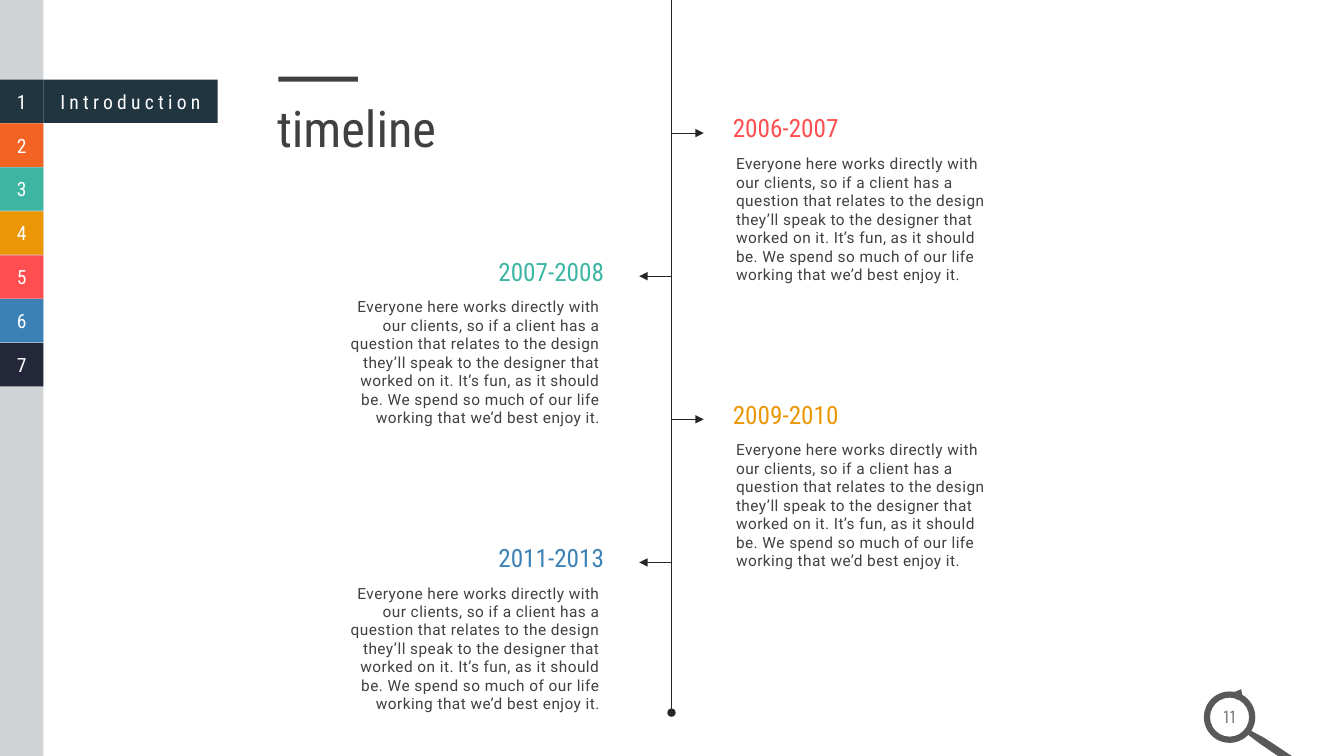
from lxml import etree
from pptx import Presentation
from pptx.dml.color import RGBColor
from pptx.enum.shapes import MSO_CONNECTOR, MSO_SHAPE
from pptx.enum.text import MSO_ANCHOR, PP_ALIGN
from pptx.oxml.ns import qn
from pptx.util import Inches, Pt

RECT, DONUT, ARROW = MSO_SHAPE.RECTANGLE, MSO_SHAPE.DONUT, MSO_SHAPE.RIGHT_ARROW
STRAIGHT = MSO_CONNECTOR.STRAIGHT
LEFT, CENTER, RIGHT = PP_ALIGN.LEFT, PP_ALIGN.CENTER, PP_ALIGN.RIGHT
MIDDLE = MSO_ANCHOR.MIDDLE

WHITE = RGBColor(0xFF, 0xFF, 0xFF)
SIDEBAR = RGBColor(0x1A, 0x2A, 0x33)
NAVY = RGBColor(0x21, 0x35, 0x40)
ORANGE = RGBColor(0xF3, 0x63, 0x24)
TEAL = RGBColor(0x3C, 0xB5, 0xA2)
AMBER = RGBColor(0xEB, 0x96, 0x05)
CORAL = RGBColor(0xFE, 0x4E, 0x50)
BLUE = RGBColor(0x3C, 0x81, 0xB5)
INK = RGBColor(0x24, 0x27, 0x3A)
TEXT = RGBColor(0x40, 0x40, 0x40)
LINE = RGBColor(0x26, 0x26, 0x26)
LENS = RGBColor(0x59, 0x59, 0x59)
PAGE = RGBColor(0x80, 0x80, 0x80)

CONDENSED, BODY, NUMBER = "Roboto Condensed", "Roboto", "Karla"
TAB_TOP, TAB_SIZE, TAB_PITCH = 0.79, 0.43, 3.05 / 7
TAB_COLORS = [NAVY, ORANGE, TEAL, AMBER, CORAL, BLUE, INK]
AXIS_X, EVENT_TOP, EVENT_PITCH = 6.66, 1.07, 1.42
EVENTS = [("2006-2007", CORAL), ("2007-2008", TEAL),
          ("2009-2010", AMBER), ("2011-2013", BLUE)]
STORY = ("Everyone here works directly with our clients, so if a client has a "
         "question that relates to the design they’ll speak to the designer "
         "that worked on it. It’s fun, as it should be. We spend so much of "
         "our life working that we’d best enjoy it.")
HANDLE = [(12.41, 7.25), (12.54, 7.32), (12.92, 7.57), (12.92, 7.62),
          (12.88, 7.64), (12.5, 7.38), (12.38, 7.29)]


def paint(s, color):
    s.shadow.inherit = False
    s.fill.solid()
    s.fill.fore_color.rgb = color
    s.line.fill.background()


def add_block(slide, kind, x, y, w, h, color):
    s = slide.shapes.add_shape(kind, Inches(x), Inches(y), Inches(w), Inches(h))
    paint(s, color)
    return s


def write(tf, text, size, font, color, align=LEFT, spacing=0):
    """Fill a text frame with one paragraph; spacing is in points."""
    tf.word_wrap = True
    tf.text = text
    p = tf.paragraphs[0]
    p.alignment = align
    r = p.runs[0]
    r.font.size = Pt(size)
    r.font.name = font
    r.font.color.rgb = color
    if spacing:
        r.font._element.set("spc", str(round(spacing * 100)))


def add_text(slide, x, y, w, h, *style, **options):
    s = slide.shapes.add_textbox(Inches(x), Inches(y), Inches(w), Inches(h))
    write(s.text_frame, *style, **options)
    return s.text_frame


def add_line(slide, x1, y1, x2, y2, end):
    """Draw a thin line whose second point carries the given arrowhead."""
    c = slide.shapes.add_connector(STRAIGHT, Inches(x1), Inches(y1),
                                   Inches(x2), Inches(y2))
    c.line.color.rgb = LINE
    c.line.width = Pt(0.25)
    etree.SubElement(c.line._get_or_add_ln(), qn("a:tailEnd"), type=end)
    etree.SubElement(c._element.spPr, qn("a:effectLst"))


def add_tab(slide, x, y, w, label, color):
    s = add_block(slide, RECT, x, y, w, TAB_SIZE, color)
    write(s.text_frame, label, 14, CONDENSED, WHITE, CENTER, spacing=3)
    s.text_frame.vertical_anchor = MIDDLE


def add_sidebar(slide):
    bar = add_block(slide, RECT, 0, 0, TAB_SIZE, 7.5, SIDEBAR)
    tint = bar._element.spPr.find(".//" + qn("a:srgbClr"))
    etree.SubElement(tint, qn("a:alpha"), val="20000")
    add_tab(slide, TAB_SIZE, TAB_TOP, 1.73, "Introduction", NAVY)
    for i, color in enumerate(TAB_COLORS):
        add_tab(slide, 0, TAB_TOP + i * TAB_PITCH, TAB_SIZE, str(i + 1), color)


def add_event(slide, i, years, color):
    """Place an event right of the axis when i is even, left when odd."""
    on_right = i % 2 == 0
    y = EVENT_TOP + i * EVENT_PITCH
    align = LEFT if on_right else RIGHT
    tf = add_text(slide, 7.17 if on_right else 3.2, y + 0.39, 2.88, 1.43,
                  STORY, 11, BODY, TEXT, align, spacing=0.3)
    tf.margin_left = tf.margin_right = Inches(0.13)
    tf.margin_top = tf.margin_bottom = Inches(0.07)
    add_text(slide, 7.17 if on_right else 4.72, y, 1.37, 0.5,
             years, 18, CONDENSED, color, align)
    reach = 0.32 if on_right else -0.32
    add_line(slide, AXIS_X, y + 0.25, AXIS_X + reach, y + 0.25, "triangle")


def add_page_lens(slide):
    add_text(slide, 11.89, 6.93, 0.61, 0.34, "11", 14, NUMBER, PAGE, CENTER)
    tip = add_block(slide, ARROW, 12.23, 6.83, 0.11, 0.11, LENS)
    tip.adjustments[0], tip.adjustments[1] = 0.32, 0.64
    tip.rotation = 298.7
    ring = add_block(slide, DONUT, 11.94, 6.86, 0.51, 0.51, LENS)
    ring.adjustments[0] = 0.12
    points = [(Inches(x), Inches(y)) for x, y in HANDLE]
    outline = slide.shapes.build_freeform(*points[0])
    outline.add_line_segments(points[1:], close=True)
    paint(outline.convert_to_shape(), LENS)


def main():
    prs = Presentation()
    prs.slide_width, prs.slide_height = Inches(13.33), Inches(7.5)
    slide = prs.slides.add_slide(prs.slide_layouts[6])
    add_sidebar(slide)
    add_text(slide, 2.65, 0.91, 2.44, 0.71, "timeline", 36, CONDENSED, TEXT)
    add_block(slide, RECT, 2.76, 0.76, 0.79, 0.05, TEXT)
    add_line(slide, AXIS_X, 0, AXIS_X, 7.07, "oval")
    for i, (years, color) in enumerate(EVENTS):
        add_event(slide, i, years, color)
    add_page_lens(slide)
    prs.save("out.pptx")


if __name__ == "__main__":
    main()
